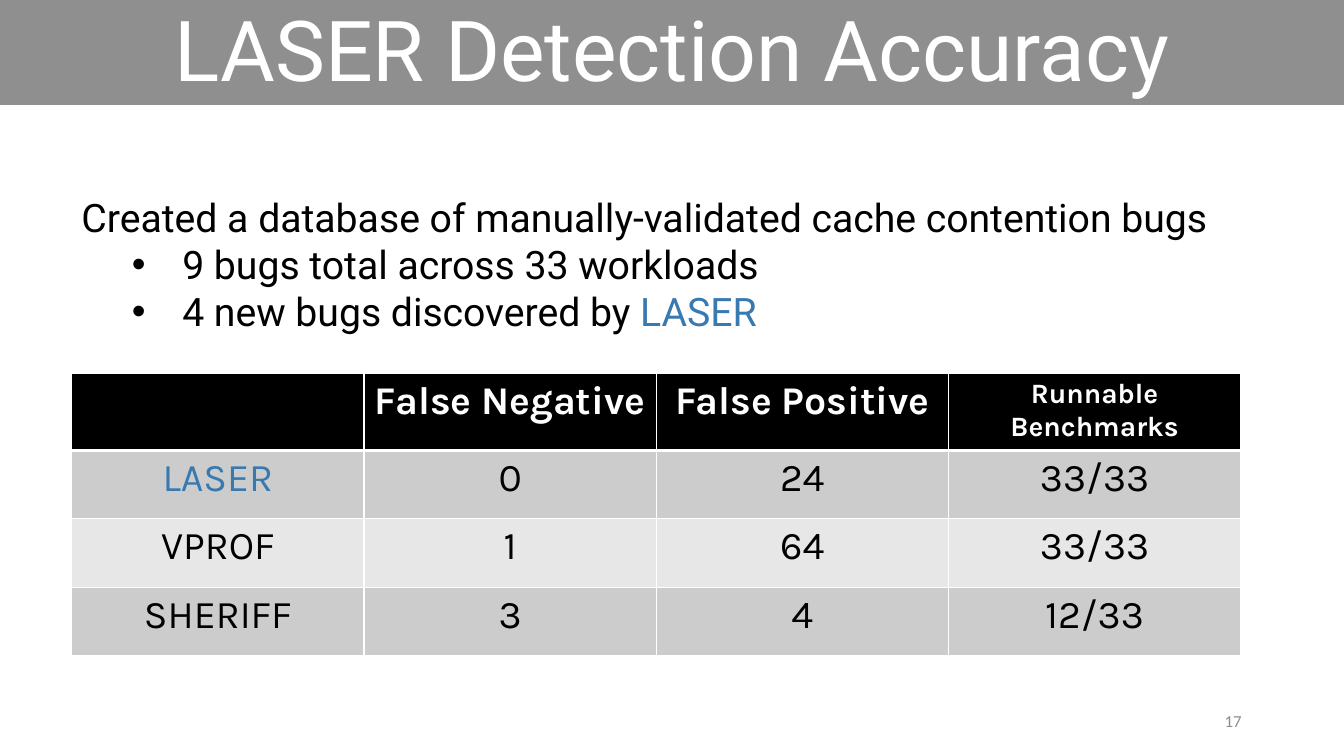
import pptx
import pptx.util
import pptx.dml.color
import pptx.enum.text
import pptx.oxml
import pptx.oxml.ns
from lxml import etree

Pt = pptx.util.Pt
ALIGN = pptx.enum.text.PP_ALIGN
ANCHOR = pptx.enum.text.MSO_ANCHOR
COLORS = {"black": "000000", "white": "FFFFFF", "laser": "3879B0",
          "number": "8C8C8C", "odd": "CCCCCC", "even": "E7E7E7"}
FINDINGS = [["Created a database of manually-validated cache contention bugs"],
            ["9 bugs total across 33 workloads"],
            ["4 new bugs discovered by ", "LASER"]]
ACCURACY = [["", "False Negative", "False Positive", "Runnable Benchmarks"],
            ["LASER", "0", "24", "33/33"],
            ["VPROF", "1", "64", "33/33"],
            ["SHERIFF", "3", "4", "12/33"]]


def rgb(name):
    """Return the named colour."""
    return pptx.dml.color.RGBColor.from_string(COLORS[name])


def style_run(run, face, size, color, bold=False):
    """Format one run."""
    run.font.name = face
    run.font.size = Pt(size)
    run.font.bold = bold
    run.font.color.rgb = rgb(color)


def place(part, box):
    """Move a part to a box given in points."""
    part.left, part.top, part.width, part.height = map(Pt, box)


def add_xml(parent, tag, **attributes):
    """Append a DrawingML element."""
    return etree.SubElement(parent, pptx.oxml.ns.qn(tag), **attributes)


def build_heading(heading, box):
    """Fill the title band."""
    place(heading, box)
    heading.fill.solid()
    heading.fill.fore_color.rgb = rgb("black")
    band_color = heading.fill._xPr.find(".//" + pptx.oxml.ns.qn("a:srgbClr"))
    add_xml(band_color, "a:alpha", val="44000")
    frame = heading.text_frame
    frame.text = "LASER Detection Accuracy"
    frame.vertical_anchor = ANCHOR.BOTTOM
    frame.auto_size = pptx.enum.text.MSO_AUTO_SIZE.NONE
    frame.paragraphs[0].alignment = ALIGN.CENTER
    frame.paragraphs[0].line_spacing = 0.9
    style_run(frame.paragraphs[0].runs[0], "Roboto", 60, "white")


def build_findings(findings, box):
    """Write the lead sentence and its bullets."""
    place(findings, box)
    frame = findings.text_frame
    frame.auto_size = pptx.enum.text.MSO_AUTO_SIZE.NONE
    for index, pieces in enumerate(FINDINGS):
        paragraph = frame.add_paragraph() if index else frame.paragraphs[0]
        paragraph.level = min(index, 1)
        paragraph.space_before = Pt(0)
        layout = paragraph._p.get_or_add_pPr()
        layout.set("marL", str(Pt(72 if index else 0)))
        layout.set("indent", str(Pt(-36 if index else 0)))
        if index:
            add_xml(layout, "a:buFont", typeface="Arial")
            add_xml(layout, "a:buChar", char="•")
        else:
            add_xml(layout, "a:buNone")
        for piece in pieces:
            run = paragraph.add_run()
            run.text = piece
            style_run(run, "Roboto", 28, "laser" if piece == "LASER" else "black")


def add_borders(cell, row):
    """Draw white cell borders, heavier below the header."""
    properties = cell._tc.get_or_add_tcPr()
    widths = {"L": 1, "R": 1, "T": 3 if row == 1 else 1, "B": 3 if row == 0 else 1}
    for position, (side, width) in enumerate(widths.items()):
        border = add_xml(properties, "a:ln" + side, w=str(Pt(width)))
        fill = add_xml(border, "a:solidFill")
        add_xml(fill, "a:srgbClr", val=COLORS["white"])
        properties.insert(position, border)


def build_accuracy(slide, box):
    """Build the accuracy table."""
    left, top, width, height = box
    header_height = 53.5
    row_count, column_count = len(ACCURACY), len(ACCURACY[0])
    accuracy = slide.shapes.add_table(row_count, column_count, *map(Pt, box)).table
    for column in accuracy.columns:
        column.width = Pt(width / column_count)
    for row, values in enumerate(ACCURACY):
        body_height = (height - header_height) / (row_count - 1)
        accuracy.rows[row].height = Pt(body_height if row else header_height)
        for column, value in enumerate(values):
            cell = accuracy.cell(row, column)
            cell.fill.solid()
            cell.fill.fore_color.rgb = rgb(
                "black" if row == 0 else "odd" if row % 2 else "even")
            add_borders(cell, row)
            cell.text = value
            paragraph = cell.text_frame.paragraphs[0]
            paragraph.alignment = ALIGN.CENTER
            color = "white" if row == 0 else "laser" if value == "LASER" else "black"
            size = 20 if value == "Runnable Benchmarks" else 28
            for run in paragraph.runs:
                style_run(run, "Karla", size, color, row == 0)


def build_page_number(slide, box):
    """Write the page number."""
    frame = slide.shapes.add_textbox(*map(Pt, box)).text_frame
    frame.word_wrap = True
    frame.vertical_anchor = ANCHOR.MIDDLE
    frame.text = "17"
    frame.paragraphs[0].alignment = ALIGN.RIGHT
    style_run(frame.paragraphs[0].runs[0], "Calibri", 12, "number")


def main():
    """Build and save the slide."""
    deck = pptx.Presentation()
    deck.slide_width, deck.slide_height = Pt(960), Pt(540)
    slide = deck.slides.add_slide(deck.slide_layouts[1])
    build_heading(slide.shapes.title, (0, 0, 960, 75))
    build_findings(slide.placeholders[1], (51, 134.5, 904.5, 109))
    build_page_number(slide, (678, 500.5, 216, 29))
    build_accuracy(slide, (51.25, 266.5, 835, 200))
    deck.save("out.pptx")


if __name__ == "__main__":
    main()
